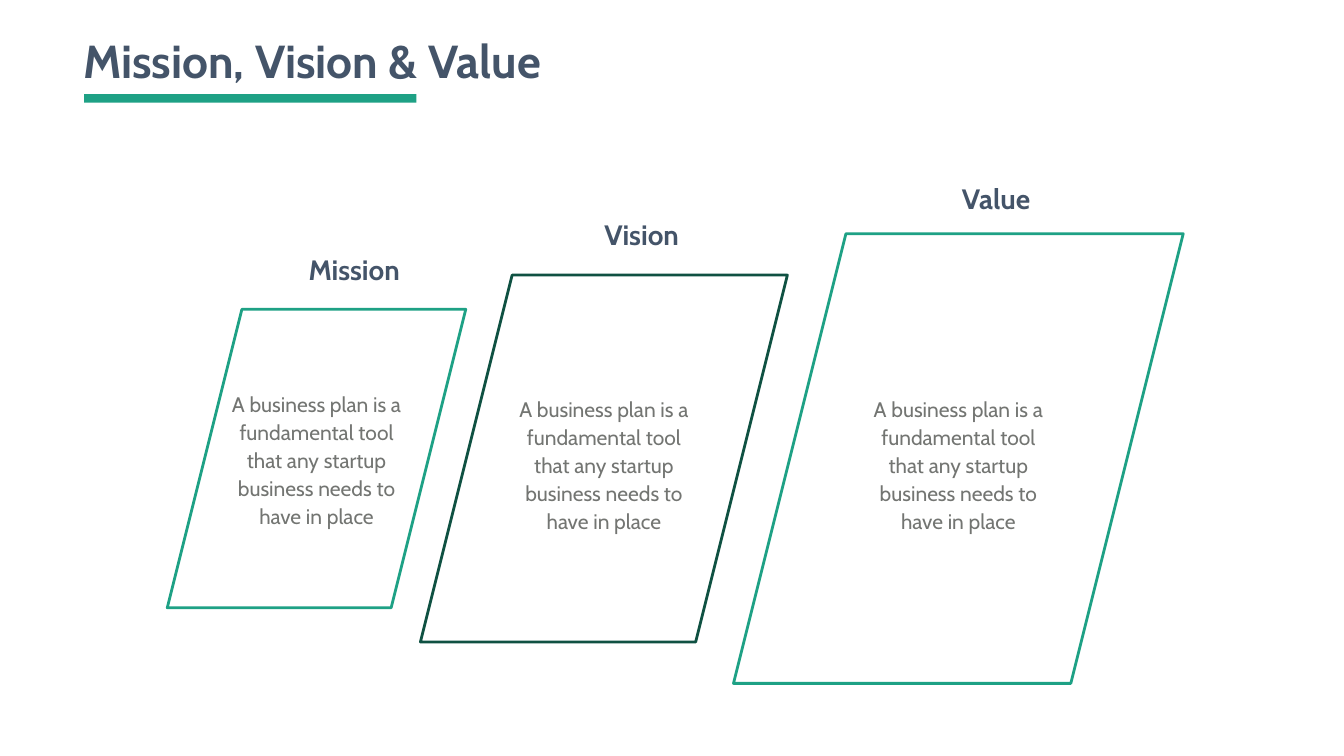
import pptx
import pptx.util
from pptx.dml.color import RGBColor
from pptx.enum.shapes import MSO_SHAPE
from pptx.enum.text import MSO_ANCHOR, MSO_AUTO_SIZE, PP_ALIGN
from pptx.util import Cm, Pt

TITLE = "Mission, Vision & Value"
BODY = "A business plan is a fundamental tool that any startup business needs to have in place"
GREEN, DARK_GREEN, NAVY, GREY = "1EA185", "0F5142", "445469", "737572"

# heading, line colour, centre x, side, body top (cm)
PANELS = [
    ("Mission", GREEN, 15.95, 15.04, 19.3),
    ("Vision", DARK_GREEN, 30.43, 18.49, 19.56),
    ("Value", GREEN, 48.29, 22.66, 19.56),
]
CENTRE_Y = 23.11
HEADING_TOP, HEADING_STEP, HEADING_SHIFT = 12.6, 1.79, 1.9
HEADING_W, HEADING_H = 5.3, 1.96
BODY_W, BODY_H = 9.75, 7.65


def rgb(value):
    return RGBColor.from_string(value)


def set_text(shape, text, size, color, bold=False, align=PP_ALIGN.CENTER,
             anchor=MSO_ANCHOR.TOP):
    """Fill a shape with one formatted paragraph and return its text frame."""
    tf = shape.text_frame
    tf.text = text
    tf.word_wrap = True
    tf.auto_size = MSO_AUTO_SIZE.NONE
    tf.vertical_anchor = anchor
    p = tf.paragraphs[0]
    p.alignment = align
    font = p.runs[0].font
    font.name, font.size, font.bold = "Cabin", Pt(size), bold
    font.color.rgb = rgb(color)
    return tf


def add_panel(s, index, heading, color, centre_x, side, body_top):
    frame = s.shapes.add_shape(
        MSO_SHAPE.PARALLELOGRAM, Cm(centre_x - side / 2), Cm(CENTRE_Y - side / 2),
        Cm(side), Cm(side))
    frame.shadow.inherit = False
    frame.fill.background()
    frame.line.color.rgb = rgb(color)
    frame.line.width = Pt(4)

    box = s.shapes.add_textbox(
        Cm(centre_x + HEADING_SHIFT - HEADING_W / 2),
        Cm(HEADING_TOP - index * HEADING_STEP), Cm(HEADING_W), Cm(HEADING_H))
    set_text(box, heading, 40, NAVY, bold=True, anchor=MSO_ANCHOR.MIDDLE)

    box = s.shapes.add_textbox(
        Cm(centre_x - BODY_W / 2), Cm(body_top), Cm(BODY_W), Cm(BODY_H))
    tf = set_text(box, BODY, 30, GREY)
    tf.margin_left = tf.margin_right = Cm(0.61)
    tf.margin_top = tf.margin_bottom = Cm(0.3)
    p = tf.paragraphs[0]
    p.line_spacing = Pt(40)
    p.space_before = Pt(6)


def main():
    prs = pptx.Presentation()
    prs.slide_width, prs.slide_height = Cm(67.72), Cm(38.1)
    s = prs.slides.add_slide(prs.slide_layouts[5])

    title = s.shapes.title
    title.left, title.top, title.width, title.height = Cm(3.94), Cm(1.52), Cm(24.1), Cm(3.07)
    set_text(title, TITLE, 66, NAVY, bold=True, align=PP_ALIGN.LEFT)

    underline = s.shapes.add_shape(
        MSO_SHAPE.RECTANGLE, Cm(4.24), Cm(4.75), Cm(16.74), Cm(0.43))
    underline.shadow.inherit = False
    underline.fill.solid()
    underline.fill.fore_color.rgb = rgb(GREEN)
    underline.line.fill.background()

    for index, panel in enumerate(PANELS):
        add_panel(s, index, *panel)
    prs.save("out.pptx")


if __name__ == "__main__":
    main()
